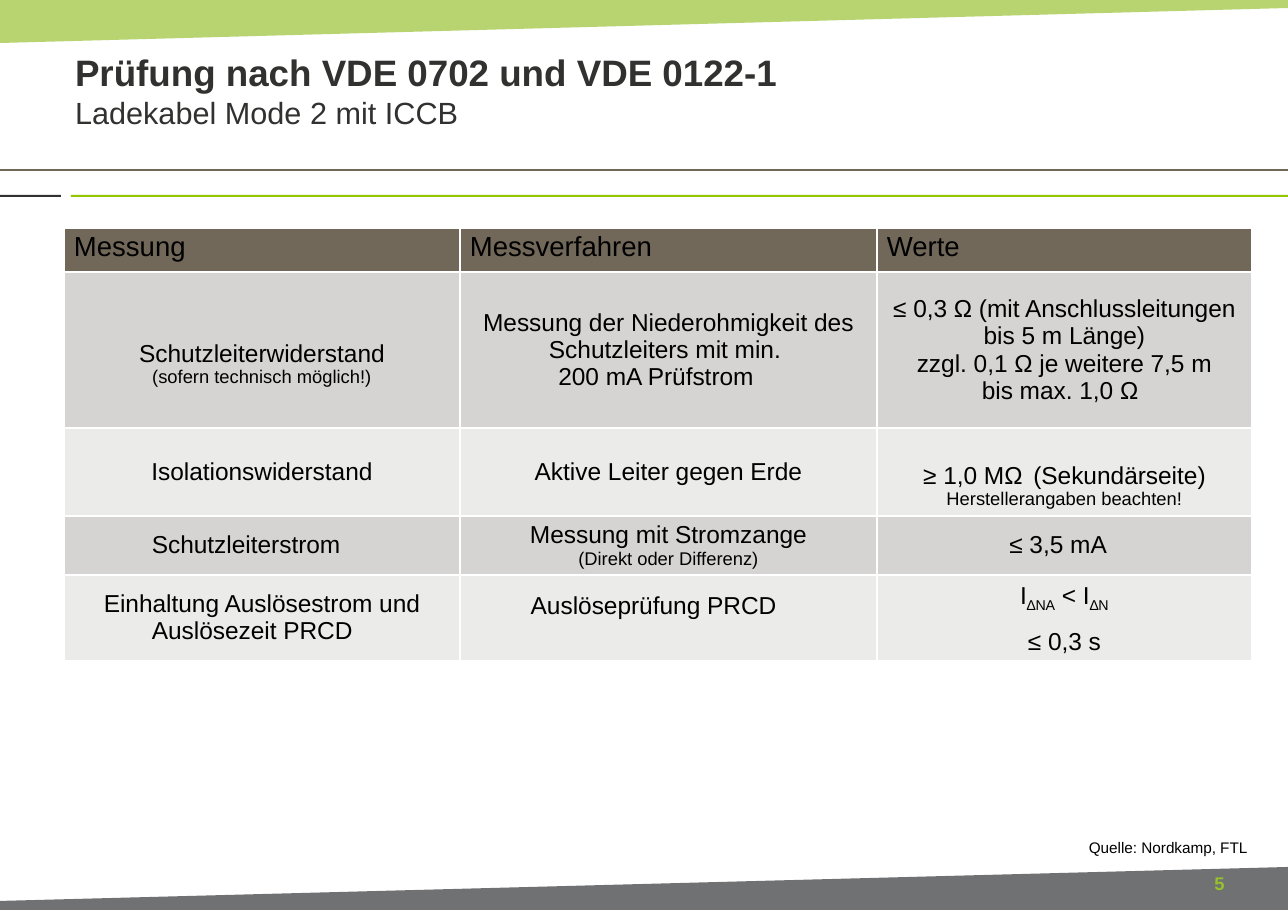
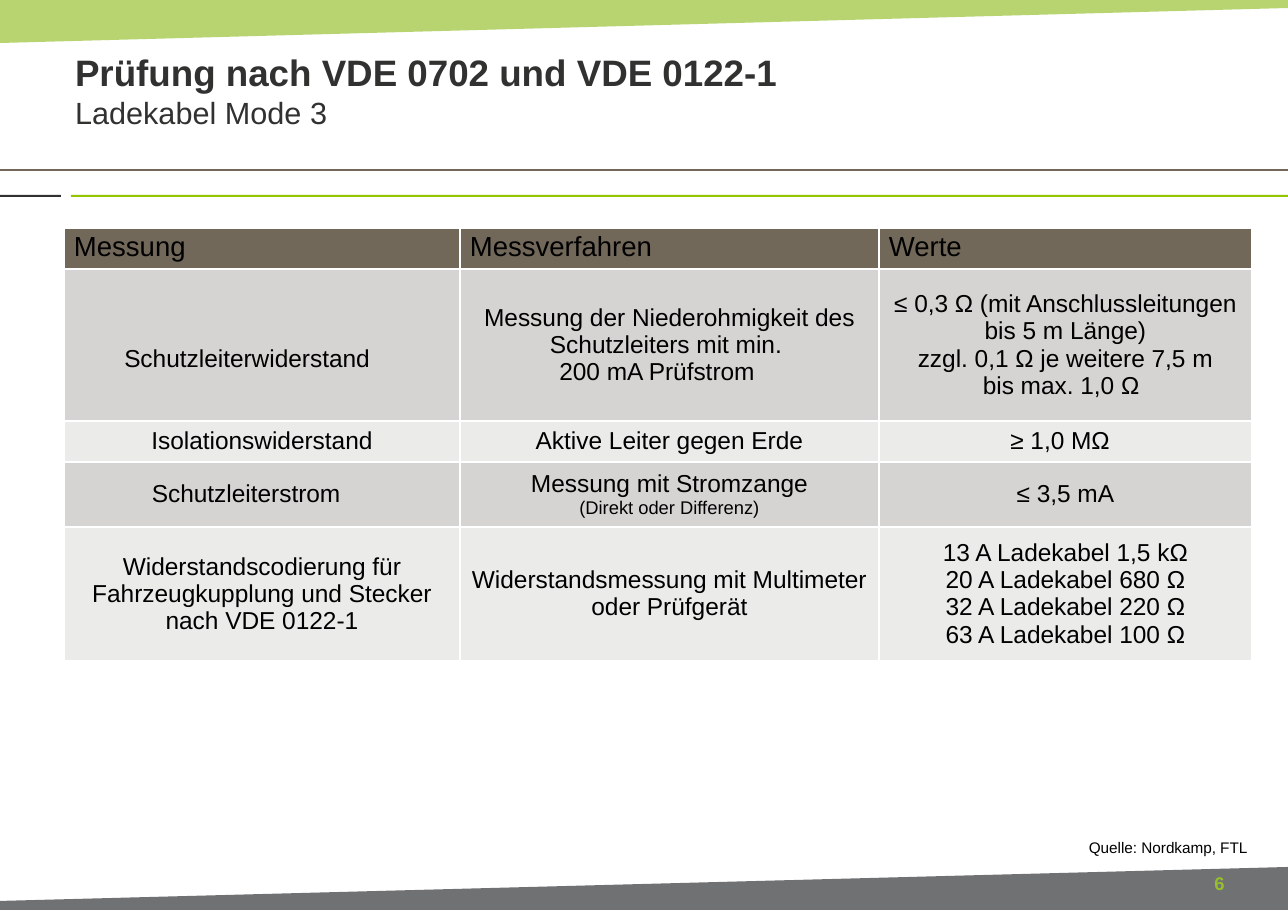
import dataclasses

import lxml.etree
import pptx
import pptx.dml.color
import pptx.enum.dml
import pptx.enum.shapes
import pptx.enum.text
import pptx.oxml.ns
import pptx.util

SCALE = 8298  # EMU per px
WIDE, HIGH = 1288, 911
ALIGN = pptx.enum.text.PP_ALIGN
ANCHOR = pptx.enum.text.MSO_ANCHOR


@dataclasses.dataclass(frozen=True)
class Theme:
    font: str = "Arial"
    ink: str = "000000"
    dark: str = "313130"
    lime: str = "94C600"
    green: str = "95C02A"
    gray: str = "707173"
    brown: str = "71685A"
    white: str = "FFFFFF"
    bands: tuple = ("D5D4D2", "EBEBEA")
    title: int = 24
    sub: int = 20
    head: int = 18
    body: int = 16
    note: int = 12
    source: int = 10


@dataclasses.dataclass(frozen=True)
class Cell:
    """Cell text; parts between underscores are set as subscripts."""
    text: str
    small: bool = False  # last line in note size
    drop: int = 0        # extra top margin
    lift: int = 0        # extra bottom margin
    gap: int = 0         # points between paragraphs
    lead: float = 1.0    # line spacing


THEME = Theme()


# Helpers
def px(*nums):
    sizes = [pptx.util.Emu(num * SCALE) for num in nums]
    return sizes[0] if len(sizes) == 1 else sizes


def color(code):
    return pptx.dml.color.RGBColor.from_string(code)


def style(run, size, code=THEME.ink, bold=False):
    run.font.name = THEME.font
    run.font.size = pptx.util.Pt(size)
    run.font.color.rgb = color(code)
    run.font.bold = bold


def inset(part, side, top, low):
    part.margin_left = part.margin_right = px(side)
    part.margin_top, part.margin_bottom = px(top, low)


def node(parent, tag, **attrs):
    return lxml.etree.SubElement(parent, pptx.oxml.ns.qn(tag), **attrs)


# Bands and rules
def paint(shape, code):
    shape.shadow.inherit = False
    shape.fill.solid()
    shape.fill.fore_color.rgb = color(code)
    shape.line.fill.background()
    return shape


def wedge(slide, points, code):
    form = slide.shapes.build_freeform(*points[0], scale=SCALE)
    form.add_line_segments(points[1:], close=True)
    return paint(form.convert_to_shape(), code)


def bar(slide, left, width, code):
    kind = pptx.enum.shapes.MSO_SHAPE.RECTANGLE
    return paint(slide.shapes.add_shape(kind, *px(left, 195, width, 2)), code)


def rule(slide, top):
    kind = pptx.enum.shapes.MSO_CONNECTOR.STRAIGHT
    line = slide.shapes.add_connector(kind, *px(WIDE, top, 0, top))
    line.line.color.rgb = color(THEME.brown)
    line.line.width = pptx.util.Pt(0.75)
    node(line.element.spPr, "a:effectLst")
    return line


def frame(slide, layout):
    """Draw the shared bands and rules, then move them to the layout."""
    top = wedge(slide, [(0, 0), (WIDE, 0), (WIDE, 8), (0, 43)], THEME.green)
    tint = top.element.spPr.find(".//" + pptx.oxml.ns.qn("a:srgbClr"))
    node(tint, "a:alpha", val="67000")
    foot = [(WIDE, 910), (0, 910), (0, 901), (WIDE, 867)]
    parts = [
        top,
        bar(slide, 0, 61, THEME.dark),
        bar(slide, 71, WIDE - 71, THEME.lime),
        wedge(slide, foot, THEME.gray),
        rule(slide, 170),
    ]
    for part in parts:
        layout.shapes.element.append(part.element)


# Text
def title(slide, head, sub):
    shape = slide.shapes.title
    shape.left, shape.top, shape.width, shape.height = px(63, 39, 807, 102)
    text = shape.text_frame
    text.auto_size = pptx.enum.text.MSO_AUTO_SIZE.NONE
    text.vertical_anchor = ANCHOR.MIDDLE
    inset(text, 12, 7, 7)
    text.text = f"{head}\v{sub}"
    para = text.paragraphs[0]
    para.alignment = ALIGN.LEFT
    style(para.runs[0], THEME.title, THEME.dark, True)
    style(para.runs[1], THEME.sub, THEME.dark)


def label(slide, box, words, size, code=THEME.ink, bold=False):
    text = slide.shapes.add_textbox(*px(*box)).text_frame
    text.word_wrap = True
    text.text = words
    style(text.paragraphs[0].runs[0], size, code, bold)
    return text


def number(slide, num):
    text = label(slide, (1182, 869, 75, 32), str(num), THEME.note, THEME.green, True)
    text.vertical_anchor = ANCHOR.MIDDLE
    inset(text, 12, 7, 7)
    text.paragraphs[0].alignment = ALIGN.CENTER
    text.paragraphs[0].line_spacing = 0.9


# Table
def coat(cell, code):
    props = cell._tc.get_or_add_tcPr()
    for side in ("L", "R", "T", "B"):
        edge = node(props, f"a:ln{side}", w=str(pptx.util.Pt(1)))
        node(node(edge, "a:solidFill"), "a:srgbClr", val=THEME.white)
    cell.fill.solid()
    cell.fill.fore_color.rgb = color(code)


def write(cell, data, size):
    inset(cell, 10, 4 + data.drop, 4 + data.lift)
    cell.text_frame.text = data.text
    paras = cell.text_frame.paragraphs
    for para in paras:
        first, *rest = para.text.split("_")
        para.text = first
        for spot, part in enumerate(rest):
            run = para.add_run()
            run.text = part
            if spot % 2 == 0:
                run._r.get_or_add_rPr().set("baseline", "-25000")
        last = para is paras[-1]
        for run in para.runs:
            style(run, THEME.note if data.small and last else size)
        para.line_spacing = data.lead
        para.space_after = pptx.util.Pt(0 if last else data.gap)


def grid(slide, cols, rows, body):
    box = px(64, 228, sum(cols), sum(rows))
    table = slide.shapes.add_table(len(rows), len(cols), *box).table
    table.first_row = table.horz_banding = False
    for col, width in zip(table.columns, cols):
        col.width = px(width)
    for row, height in zip(table.rows, rows):
        row.height = px(height)
    for spot, name in enumerate(("Messung", "Messverfahren", "Werte")):
        cell = table.cell(0, spot)
        coat(cell, THEME.brown)
        write(cell, Cell(name), THEME.head)
    for line, items in enumerate(body, 1):
        for spot, item in enumerate(items):
            cell = table.cell(line, spot)
            coat(cell, THEME.bands[(line - 1) % 2])
            write(cell, item, THEME.body)
            cell.vertical_anchor = ANCHOR.MIDDLE
            for para in cell.text_frame.paragraphs:
                para.alignment = ALIGN.CENTER


# Content
LOW = Cell("Messung der Niederohmigkeit des Schutzleiters mit min. \n200 mA Prüfstrom\t")
LIMIT = Cell("≤ 0,3 Ω (mit Anschlussleitungen bis 5 m Länge)\n"
             "zzgl. 0,1 Ω je weitere 7,5 m\nbis max. 1,0 Ω\t")
ISO = Cell("Isolationswiderstand")
EARTH = Cell("Aktive Leiter gegen Erde")
LEAK = Cell("Schutzleiterstrom\t")
CLAMP = Cell("Messung mit Stromzange\n(Direkt oder Differenz)", small=True)

MODE2 = [
    (Cell("Schutzleiterwiderstand\n(sofern technisch möglich!)", small=True, drop=28),
     LOW, LIMIT),
    (ISO, EARTH, Cell("≥ 1,0 MΩ\t(Sekundärseite)\nHerstellerangaben beachten!",
                      small=True, drop=28)),
    (LEAK, CLAMP, Cell("≤ 3,5 mA\t")),
    (Cell("Einhaltung Auslösestrom und Auslösezeit PRCD\t"),
     Cell("Auslöseprüfung PRCD\t", lift=24),
     Cell("I_∆NA_ < I_∆N\n≤ 0,3 s", gap=8, lead=1.07)),
]
MODE3 = [
    (Cell("Schutzleiterwiderstand\t", drop=28), LOW, LIMIT),
    (ISO, EARTH, Cell("≥ 1,0 MΩ\t")),
    (LEAK, CLAMP, Cell("≤ 3,5 mA")),
    (Cell("Widerstandscodierung für Fahrzeugkupplung und Stecker nach VDE 0122-1"),
     Cell("Widerstandsmessung mit Multimeter oder Prüfgerät"),
     Cell("13 A Ladekabel 1,5 kΩ\n20 A Ladekabel 680 Ω\n"
          "32 A Ladekabel 220 Ω\n63 A Ladekabel 100 Ω")),
]
PAGES = [
    ("Ladekabel Mode 2 mit ICCB", (396, 417, 375), (44, 156, 88, 59, 86), MODE2),
    ("Ladekabel Mode 3", (396, 419, 373), (41, 152, 41, 65, 134), MODE3),
]


def main():
    deck = pptx.Presentation()
    deck.slide_width, deck.slide_height = px(WIDE, HIGH)
    layout = deck.slide_layouts[5]
    for num, (sub, cols, rows, body) in enumerate(PAGES, 5):
        slide = deck.slides.add_slide(layout)
        if num == 5:
            frame(slide, layout)
        grid(slide, cols, rows, body)
        title(slide, "Prüfung nach VDE 0702 und VDE 0122-1", sub)
        label(slide, (1078, 833, 210, 30), "Quelle: Nordkamp, FTL", THEME.source)
        number(slide, num)
    deck.save("out.pptx")


if __name__ == "__main__":
    main()
